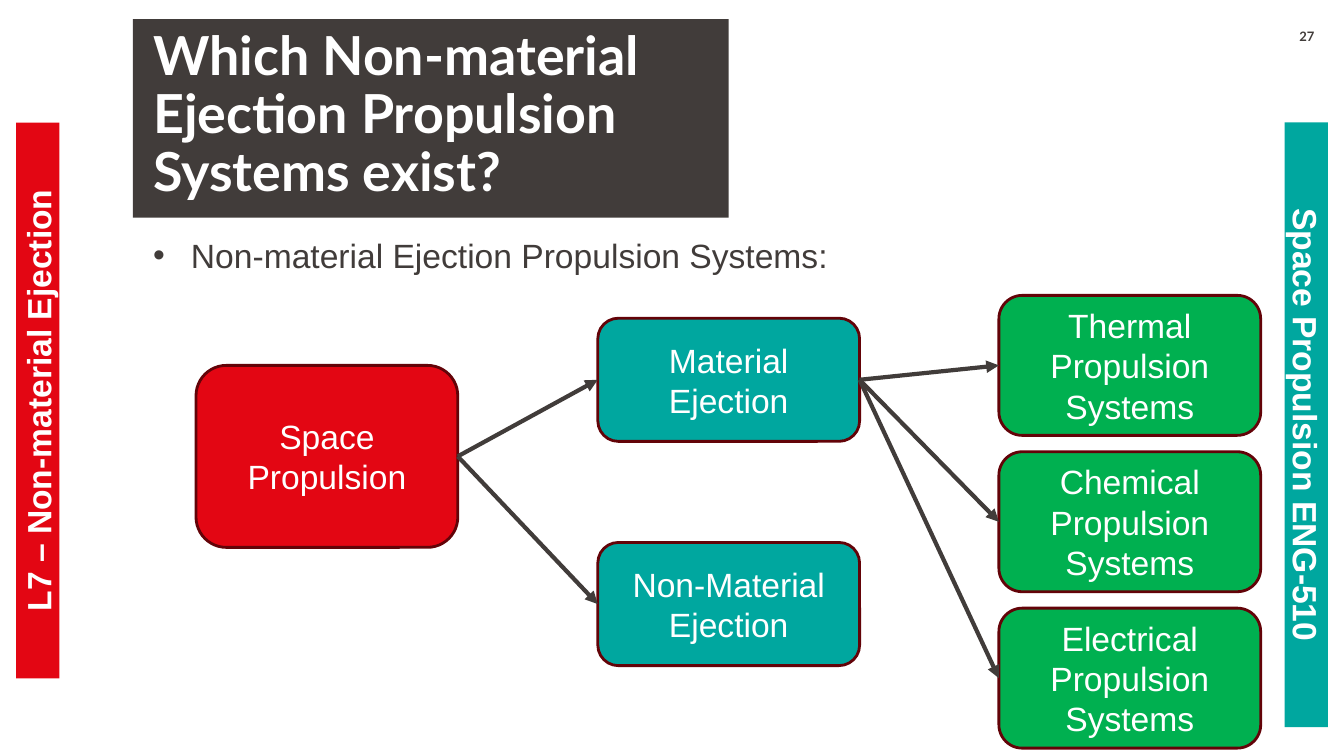
from lxml import etree
from pptx import Presentation
from pptx.dml.color import RGBColor
from pptx.enum import shapes, text
from pptx.oxml import ns
from pptx.util import Pt

WHITE = RGBColor(0xFF, 0xFF, 0xFF)
DARK = RGBColor(0x41, 0x3C, 0x3A)
RED = RGBColor(0xE3, 0x06, 0x13)
TEAL = RGBColor(0x00, 0xA7, 0x9F)
GREEN = RGBColor(0x00, 0xB0, 0x50)
MAROON = RGBColor(0x63, 0x03, 0x08)

BOX_WIDTH = 187
LEFT_SITE, RIGHT_SITE = 1, 3


def place(shape, left, top, width, height):
    shape.left, shape.top = Pt(left), Pt(top)
    shape.width, shape.height = Pt(width), Pt(height)


def write(shape, words, size, color, font="Arial", bold=False,
          align=text.PP_ALIGN.CENTER, anchor=text.MSO_ANCHOR.MIDDLE,
          margins=(7.2, 3.6, 7.2, 3.6)):
    frame = shape.text_frame
    frame.text = words
    frame.word_wrap = True
    frame.auto_size = text.MSO_AUTO_SIZE.NONE
    frame.vertical_anchor = anchor
    (frame.margin_left, frame.margin_top,
     frame.margin_right, frame.margin_bottom) = map(Pt, margins)
    para = frame.paragraphs[0]
    para.alignment = align
    para.font.name = font
    para.font.size = Pt(size)
    para.font.bold = bold
    para.font.color.rgb = color
    return para


def fill(shape, color):
    shape.fill.solid()
    shape.fill.fore_color.rgb = color


def add_title(page, words):
    title = page.shapes.title
    place(title, 95, 13.7, 425.5, 141.8)
    fill(title, DARK)
    para = write(title, words, 38.4, WHITE, font="Lato", bold=True,
                 align=text.PP_ALIGN.LEFT, margins=(14.4, 0, 5.8, 3.6))
    para.line_spacing = 0.9


def add_body(page, words):
    body = page.placeholders[1]
    place(body, 95, 164.2, 811.4, 355.7)
    body.text_frame.text = words
    properties = body.text_frame.paragraphs[0]._p.get_or_add_pPr()
    properties.set("marL", "0")
    properties.set("indent", "0")
    para = write(body, words, 24, DARK, align=text.PP_ALIGN.LEFT,
                 anchor=text.MSO_ANCHOR.TOP, margins=(14.4, 3.6, 7.2, 3.6))
    para.space_before = Pt(0)
    etree.SubElement(properties, ns.qn("a:buNone"))


def add_page_number(page, number):
    box = page.shapes.add_textbox(Pt(906.5), Pt(20.2), Pt(54), Pt(17.3))
    write(box, number, 9.3, DARK, font="Lato", bold=True,
          anchor=text.MSO_ANCHOR.TOP, margins=(7.2, 0, 7.2, 0))


def add_side_bar(page, words, center_x, center_y, length, rotation, color):
    thickness = 31
    bar = page.shapes.add_shape(
        shapes.MSO_SHAPE.RECTANGLE, Pt(center_x - length / 2),
        Pt(center_y - thickness / 2), Pt(length), Pt(thickness))
    bar.rotation = rotation
    bar.shadow.inherit = False
    fill(bar, color)
    bar.line.fill.background()
    write(bar, words, 24, WHITE, bold=True)


def add_box(page, words, left, top, height, color):
    box = page.shapes.add_shape(
        shapes.MSO_SHAPE.ROUNDED_RECTANGLE,
        Pt(left), Pt(top), Pt(BOX_WIDTH), Pt(height))
    box.shadow.inherit = False
    fill(box, color)
    box.line.color.rgb = MAROON
    box.line.width = Pt(2)
    write(box, words, 24, WHITE)
    return box


def add_arrow(page, source, target):
    arrow = page.shapes.add_connector(shapes.MSO_CONNECTOR.STRAIGHT, 0, 0, 0, 0)
    arrow.begin_connect(source, RIGHT_SITE)
    arrow.end_connect(target, LEFT_SITE)
    arrow.line.color.rgb = DARK
    arrow.line.width = Pt(3)
    etree.SubElement(arrow.line._get_or_add_ln(), ns.qn("a:tailEnd"), type="triangle")
    etree.SubElement(arrow._element.spPr, ns.qn("a:effectLst"))


def main():
    deck = Presentation()
    deck.slide_width, deck.slide_height = Pt(960), Pt(540)
    page = deck.slides.add_slide(deck.slide_layouts[1])

    add_title(page, "Which Non-material Ejection Propulsion Systems exist?")
    add_body(page, "Non-material Ejection Propulsion Systems:")
    add_page_number(page, "27")
    add_side_bar(page, "Space Propulsion ENG-510", 933, 303.4, 432, 90, TEAL)
    add_side_bar(page, "L7 – Non-material Ejection", 27, 286, 397, 270, RED)

    root = add_box(page, "Space Propulsion", 140, 261, 130, RED)
    material, non_material = [
        add_box(page, f"{kind} Ejection", 427, top, 88, TEAL)
        for kind, top in (("Material", 227.3), ("Non-Material", 387.5))]
    systems = [
        add_box(page, f"{kind} Propulsion Systems", 713.5, 211 + 111.7 * row, 100, GREEN)
        for row, kind in enumerate(("Thermal", "Chemical", "Electrical"))]

    for source, targets in ((root, (material, non_material)), (material, systems)):
        for target in targets:
            add_arrow(page, source, target)

    deck.save("out.pptx")


if __name__ == "__main__":
    main()
